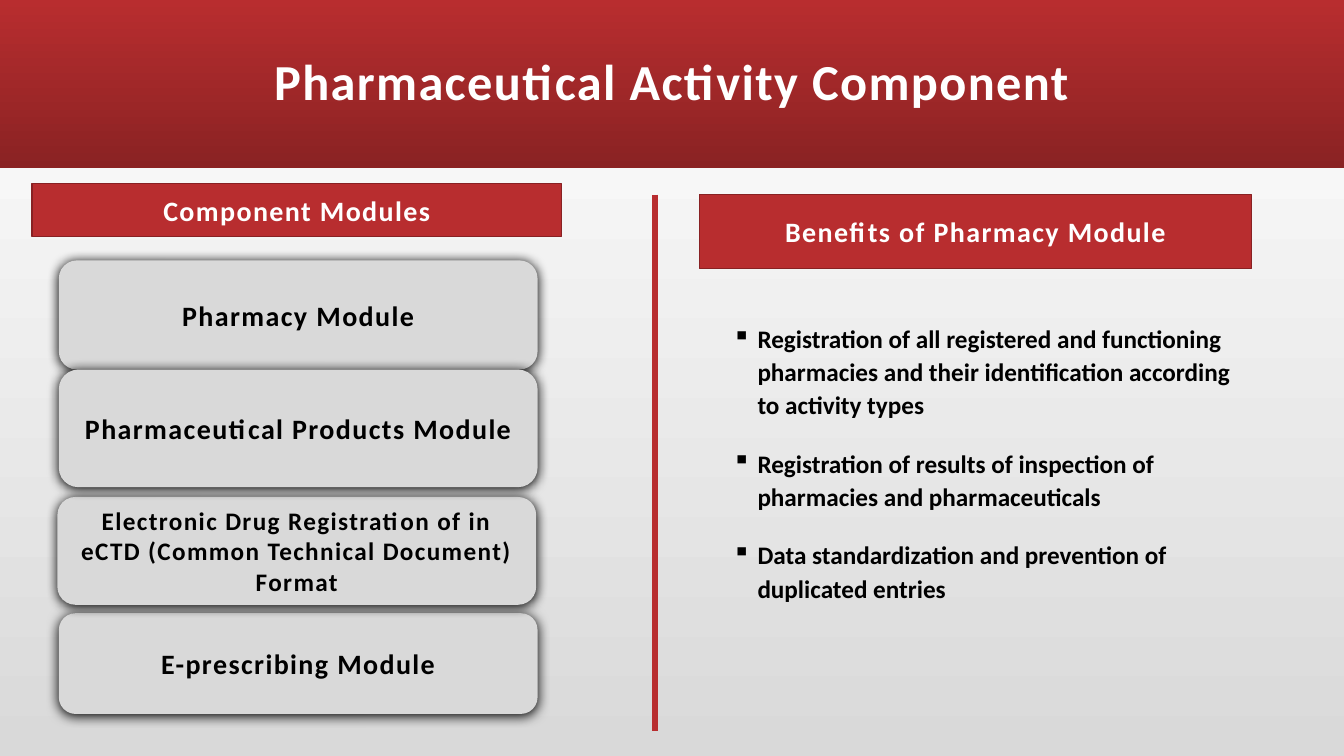
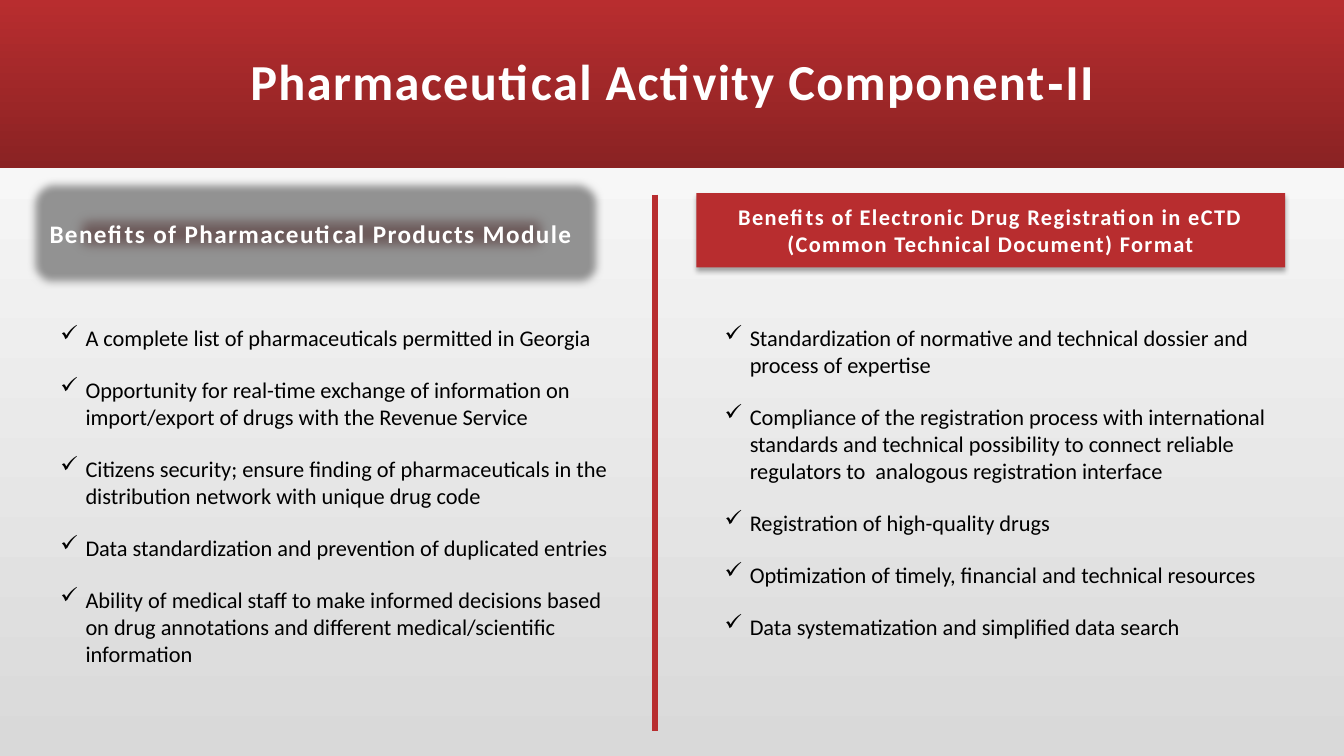
from dataclasses import dataclass

from lxml import etree
from pptx import Presentation
from pptx.dml.color import RGBColor
from pptx.enum.shapes import MSO_CONNECTOR, MSO_SHAPE
from pptx.enum.text import MSO_ANCHOR, MSO_AUTO_SIZE, PP_ALIGN
from pptx.oxml.ns import qn
from pptx.util import Pt

RECT, ROUND = MSO_SHAPE.RECTANGLE, MSO_SHAPE.ROUNDED_RECTANGLE
LINE = MSO_CONNECTOR.STRAIGHT
CENTER, LEFT = PP_ALIGN.CENTER, PP_ALIGN.LEFT
MIDDLE, TOP = MSO_ANCHOR.MIDDLE, MSO_ANCHOR.TOP
NO_FIT = MSO_AUTO_SIZE.NONE


@dataclass(frozen=True)
class Theme:
    font: str = "Calibri"
    dash: str = "Arial"
    red: str = "B82D2F"
    deep: str = "8A2223"
    edge: str = "882123"
    pale: str = "D9D9D9"
    white: str = "FFFFFF"
    black: str = "000000"
    smoke: str = "929292"
    halo: str = "6E5C5C"
    title: int = 36
    head: int = 20
    sub: int = 18
    small: int = 16


@dataclass(frozen=True)
class Box:
    x: float
    y: float
    w: float
    h: float


@dataclass(frozen=True)
class Shadow:
    blur: float
    dist: float
    alpha: int


@dataclass(frozen=True)
class Card:
    text: str
    box: Box
    size: int


@dataclass(frozen=True)
class Points:
    items: tuple[str, ...]
    box: Box
    mark: str
    size: int
    bold: bool = False
    lead: float = 1.0


T = Theme()
WIDE, HIGH, BAND = 960, 540, 120
SOFT = Shadow(3.5, 2.2, 32)
DARK = Shadow(8.5, 1, 100)

CARDS = (
    Card("Pharmacy Module", Box(42, 186, 342, 78), T.head),
    Card("E-prescribing Module", Box(42, 438, 342, 72), T.head),
    Card("Electronic Drug Registration of in eCTD (Common Technical Document) Format",
         Box(41, 355, 342, 77), T.sub),
    Card("Pharmaceutical Products Module", Box(42, 264, 342, 84), T.head),
)
PHARMACY = Points((
    "Registration of all registered and functioning pharmacies and their "
    "identification according to activity types",
    "Registration of results of inspection of pharmacies and pharmaceuticals",
    "Data standardization and prevention of duplicated entries",
), Box(516, 225, 372, 285), "▪", T.sub, True, 1.1)
PRODUCTS = Points((
    "A complete list of pharmaceuticals permitted in Georgia",
    "Opportunity for real-time exchange of information on import/export of drugs "
    "with the Revenue Service",
    "Citizens security; ensure finding of pharmaceuticals in the distribution "
    "network with unique drug code",
    "Data standardization and prevention of duplicated entries",
    "Ability of medical staff to make informed decisions based on drug annotations "
    "and different medical/scientific information",
), Box(36, 228, 408, 288), "✓", T.small)
DRUGS = Points((
    "Standardization of normative and technical dossier and process of expertise",
    "Compliance of the registration process with international standards and "
    "technical possibility to connect reliable regulators to  analogous "
    "registration interface",
    "Registration of high-quality drugs",
    "Optimization of timely, financial and technical resources",
    "Data systematization and simplified data search",
), Box(510.5, 228, 413, 306), "✓", T.small)


def rgb(code: str) -> RGBColor:
    return RGBColor.from_string(code)


def place(box: Box) -> tuple:
    return Pt(box.x), Pt(box.y), Pt(box.w), Pt(box.h)


def blend(fill, first: str, last: str, angle: int) -> None:
    fill.gradient()
    fill.gradient_angle = angle
    for stop, code, at in zip(fill.gradient_stops, (first, last), (0, 1)):
        stop.color.rgb = rgb(code)
        stop.position = at


def style(para, size: int, code: str, bold: bool = True, space: int = 0) -> None:
    """Set a paragraph's font; space is letter spacing in points."""
    font = para.font
    font.name, font.size, font.bold = T.font, Pt(size), bold
    font.color.rgb = rgb(code)
    if space:
        font._element.set("spc", str(space * 100))


def label(shape, text: str, size: int, code: str, wrap: bool = True) -> None:
    frame = shape.text_frame
    frame.word_wrap, frame.vertical_anchor = wrap, MIDDLE
    frame.text = text
    para = frame.paragraphs[0]
    para.alignment = CENTER
    style(para, size, code, space=1)


def effects(shape):
    return shape.element.spPr.find(qn("a:effectLst"))


def block(slide, box: Box, code: str, kind=RECT, edge: str = "",
          shadow: Shadow | None = None, blur: int = 0):
    """Draw a filled shape; blur is the soft edge radius in points."""
    shape = slide.shapes.add_shape(kind, *place(box))
    shape.shadow.inherit = False
    shape.fill.solid()
    shape.fill.fore_color.rgb = rgb(code)
    if edge:
        shape.line.color.rgb = rgb(edge)
        shape.line.width = Pt(1)
    else:
        shape.line.fill.background()
    if shadow:
        outer = etree.SubElement(
            effects(shape), qn("a:outerShdw"), blurRad=str(Pt(shadow.blur)),
            dist=str(Pt(shadow.dist)), dir="5400000", algn="ctr", rotWithShape="0")
        tint = etree.SubElement(outer, qn("a:srgbClr"), val=T.black)
        etree.SubElement(tint, qn("a:alpha"), val=str(shadow.alpha * 1000))
    if blur:
        etree.SubElement(effects(shape), qn("a:softEdge"), rad=str(Pt(blur)))
    return shape


def header(slide, text: str, box: Box, size: int, edge: str = "",
           shadow: Shadow | None = None) -> None:
    label(block(slide, box, T.red, edge=edge, shadow=shadow), text, size, T.white)


def haze(slide, text: str) -> None:
    """Draw the blurred grey heading with a dark glow behind its text."""
    block(slide, Box(20, 127, 411, 79), T.smoke, ROUND, blur=6)
    glow = block(slide, Box(46, 146, 352, 41), T.halo, blur=10)
    label(glow, text, T.sub, T.white, wrap=False)


def bullets(slide, points: Points) -> None:
    frame = slide.shapes.add_textbox(*place(points.box)).text_frame
    frame.word_wrap, frame.vertical_anchor = True, TOP
    for n, item in enumerate(points.items):
        para = frame.add_paragraph() if n else frame.paragraphs[0]
        para.text = item
        para.alignment, para.line_spacing = LEFT, points.lead
        para.space_before = Pt(18)
        style(para, points.size, T.black, points.bold)
        props = para._p.get_or_add_pPr()
        props.set("marL", str(Pt(18)))
        props.set("indent", str(-Pt(18)))
        mark = etree.Element(qn("a:buChar"), char=points.mark)
        props.find(qn("a:defRPr")).addprevious(mark)


def divide(slide) -> None:
    rule = slide.shapes.add_connector(LINE, Pt(468), Pt(139), Pt(468), Pt(522))
    rule.line.color.rgb = rgb(T.red)
    rule.line.width = Pt(4)
    etree.SubElement(rule.element.spPr, qn("a:effectLst"))


def start(deck, layout, *parts: str):
    """Add a slide with its title; a part that is a dash gets its own font."""
    slide = deck.slides.add_slide(layout)
    title = slide.shapes.title
    title.left, title.top, title.width, title.height = place(Box(84, 0, 792, BAND))
    frame = title.text_frame
    frame.word_wrap, frame.auto_size, frame.vertical_anchor = True, NO_FIT, MIDDLE
    para = frame.paragraphs[0]
    para.alignment, para.line_spacing = CENTER, 0.9
    style(para, T.title, T.white, space=1)
    for part in parts:
        run = para.add_run()
        run.text = part
        if part == "-":
            run.font.name = T.dash
    return slide


def modules(deck, layout):
    slide = start(deck, layout, "Pharmaceutical Activity Component")
    header(slide, "Component Modules", Box(23, 131, 378, 38), T.head, T.edge)
    for card in CARDS:
        shape = block(slide, card.box, T.pale, ROUND, shadow=DARK)
        label(shape, card.text, card.size, T.black)
    bullets(slide, PHARMACY)
    divide(slide)
    header(slide, "Benefits of Pharmacy Module", Box(499.5, 139, 394.5, 53),
           T.head, T.edge)
    return slide


def benefits(deck, layout) -> None:
    slide = start(deck, layout, "Pharmaceutical Activity Component", "-", "II")
    haze(slide, "Benefits of Pharmaceutical Products Module")
    divide(slide)
    header(slide, "Benefits of Electronic Drug Registration in eCTD "
           "(Common Technical Document) Format", Box(497.5, 138, 420.5, 53),
           T.small, shadow=SOFT)
    bullets(slide, PRODUCTS)
    bullets(slide, DRUGS)


def main() -> None:
    deck = Presentation()
    deck.slide_width, deck.slide_height = Pt(WIDE), Pt(HIGH)
    blend(deck.slide_master.background.fill, T.pale, T.white, 90)
    layout = deck.slide_layouts[5]
    first = modules(deck, layout)
    band = block(first, Box(0, 0, WIDE, BAND), T.red)
    blend(band.fill, T.red, T.deep, 270)
    layout.shapes.element.insert(2, band.element)
    benefits(deck, layout)
    deck.save("out.pptx")


if __name__ == "__main__":
    main()
